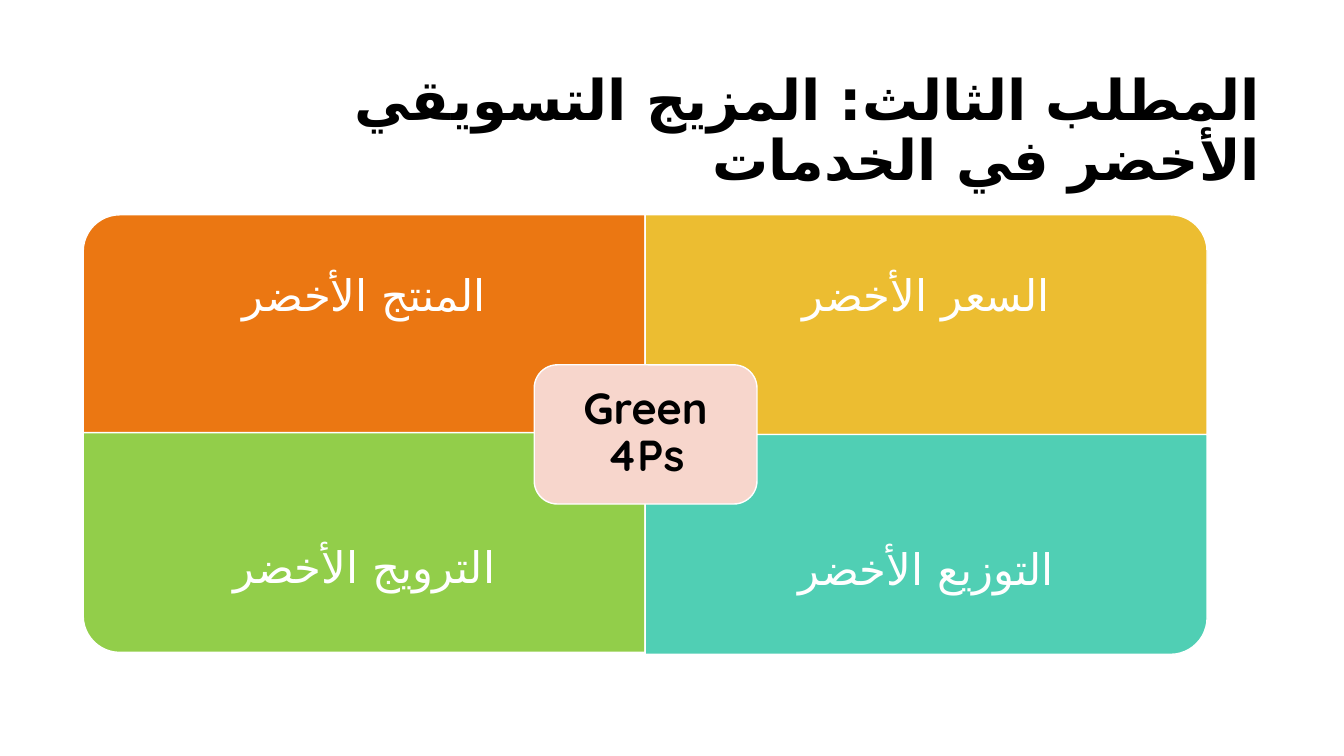
from pptx import Presentation
from pptx.dml.color import RGBColor
from pptx.enum.shapes import MSO_SHAPE
from pptx.enum.text import MSO_ANCHOR, PP_ALIGN
from pptx.oxml.ns import qn
from pptx.util import Pt
from lxml import etree

FONT = "Quicksand"
ARABIC_FONT = "DejaVu Sans"
WHITE = "FFFFFF"
BLACK = "000000"


def rgb(color):
    return RGBColor.from_string(color)


def add_text(s, box, text, size=31, color=WHITE, bold=False,
             align=PP_ALIGN.CENTER, insets=(17, 17, 17, 17), rtl=False):
    tf = s.shapes.add_textbox(*map(Pt, box)).text_frame
    tf.word_wrap = True
    tf.vertical_anchor = MSO_ANCHOR.MIDDLE
    tf.margin_left, tf.margin_top, tf.margin_right, tf.margin_bottom = map(Pt, insets)
    p = tf.paragraphs[0]
    p.alignment = align
    p.line_spacing = 0.9
    if rtl:
        p._p.get_or_add_pPr().set("rtl", "1")
    r = p.add_run()
    r.text = text
    r.font.name = FONT
    r.font.size = Pt(size)
    r.font.bold = bold
    r.font.color.rgb = rgb(color)
    etree.SubElement(r._r.get_or_add_rPr(), qn("a:cs")).set("typeface", ARABIC_FONT)


def add_panel(s, kind, box, fill, rotation=0):
    x, y, w, h = box
    if rotation % 180:
        x, y, w, h = x + (w - h) / 2, y + (h - w) / 2, h, w
    sp = s.shapes.add_shape(kind, *map(Pt, (x, y, w, h)))
    sp.rotation = rotation
    sp.shadow.inherit = False
    sp.fill.solid()
    sp.fill.fore_color.rgb = rgb(fill)
    sp.line.color.rgb = rgb(WHITE)
    sp.line.width = Pt(1)


def add_title(s, box):
    add_text(s, box, "المطلب الثالث: المزيج التسويقي الأخضر في الخدمات", size=40,
             color=BLACK, bold=True, align=PP_ALIGN.RIGHT,
             insets=(7.2, 3.6, 7.2, 47), rtl=True)


def add_matrix(s, box):
    x, y, w, h = box
    cell_w, cell_h = w / 2, h / 2
    text_h = cell_h * 0.75
    quadrants = [
        ("المنتج الأخضر", "EB7712", 270, 0, 0, 0),
        ("السعر الأخضر", "ECBD31", 0, 1, 0, 0),
        ("الترويج الأخضر", "92CE4A", 180, 0, 1, -1.4),
        ("التوزيع الأخضر", "50CFB4", 90, 1, 1, 0),
    ]
    for label, fill, rotation, col, row, shift in quadrants:
        left, top = x + col * cell_w, y + row * cell_h + shift
        add_panel(s, MSO_SHAPE.ROUND_1_RECTANGLE, (left, top, cell_w, cell_h),
                  fill, rotation)
        text_top = top + row * (cell_h - text_h)
        add_text(s, (left, text_top, cell_w, text_h), label)


def add_center(s, box):
    x, y, w, h = box
    add_panel(s, MSO_SHAPE.ROUNDED_RECTANGLE, box, "F7D6CC")
    pad = 4.8
    add_text(s, (x + pad, y + pad, w - 2 * pad, h - 2 * pad), "Green 4Ps",
             color=BLACK, bold=True, insets=(9.4, 9.4, 9.4, 9.4))


def main():
    prs = Presentation()
    prs.slide_width, prs.slide_height = Pt(960), Pt(540)
    s = prs.slides.add_slide(prs.slide_layouts[6])
    add_title(s, (165.6, 65.5, 741.6, 101.5))
    add_matrix(s, (59.4, 153.4, 802.8, 314))
    add_center(s, (381.6, 260.6, 159.1, 99.4))
    prs.save("out.pptx")


if __name__ == "__main__":
    main()
